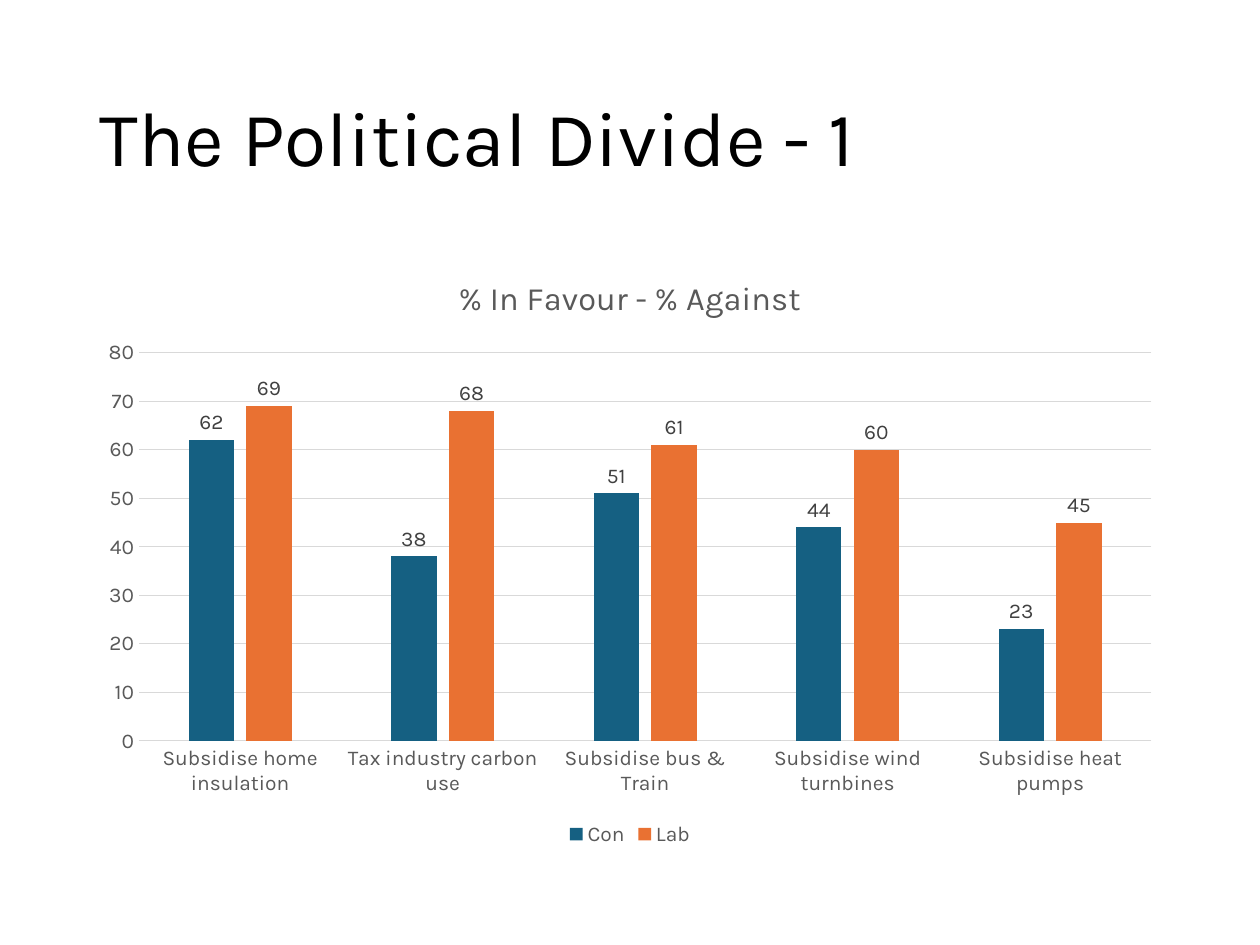
import pptx
import pptx.chart.data
import pptx.dml.color
import pptx.enum.chart
import pptx.enum.text
import pptx.util

Inches = pptx.util.Inches
Pt = pptx.util.Pt
RGBColor = pptx.dml.color.RGBColor

BLACK = RGBColor(0x00, 0x00, 0x00)
DARK_GREY = RGBColor(0x40, 0x40, 0x40)
GREY = RGBColor(0x59, 0x59, 0x59)
LIGHT_GREY = RGBColor(0xD9, 0xD9, 0xD9)
BLUE = RGBColor(0x15, 0x60, 0x82)
ORANGE = RGBColor(0xE9, 0x71, 0x32)


def format_font(font, size=12, color=GREY):
    font.name = "Karla"
    font.size = Pt(size)
    font.bold = False
    font.color.rgb = color


def write_text(text_frame, text, line_spacing=None, **font_format):
    text_frame.text = text
    paragraph = text_frame.paragraphs[0]
    paragraph.alignment = pptx.enum.text.PP_ALIGN.LEFT
    paragraph.line_spacing = line_spacing
    format_font(paragraph.runs[0].font, **font_format)


presentation = pptx.Presentation()
presentation.slide_width = Inches(10)
presentation.slide_height = Inches(7.5)
slide = presentation.slides.add_slide(presentation.slide_layouts[5])

title = slide.shapes.title
title.left, title.top = Inches(0.69), Inches(0.4)
title.width, title.height = Inches(8.62), Inches(1.45)
title.text_frame.vertical_anchor = pptx.enum.text.MSO_ANCHOR.MIDDLE
write_text(title.text_frame, "The Political Divide - 1", line_spacing=0.9, size=44, color=BLACK)

chart_data = pptx.chart.data.CategoryChartData()
chart_data.categories = [
    "Subsidise home insulation",
    "Tax industry carbon use",
    "Subsidise bus & Train",
    "Subsidise wind turnbines",
    "Subsidise heat pumps",
]
chart_data.add_series("Con", [62, 38, 51, 44, 23])
chart_data.add_series("Lab", [69, 68, 61, 60, 45])
chart = slide.shapes.add_chart(
    pptx.enum.chart.XL_CHART_TYPE.COLUMN_CLUSTERED,
    Inches(0.69), Inches(2), Inches(8.62), Inches(4.76), chart_data,
).chart
format_font(chart.font, size=10, color=BLACK)

chart.has_title = True
write_text(chart.chart_title.text_frame, "% In Favour - % Against", size=18.6)
chart.chart_title.include_in_layout = False

chart.has_legend = True
chart.legend.position = pptx.enum.chart.XL_LEGEND_POSITION.BOTTOM
chart.legend.include_in_layout = False
format_font(chart.legend.font)

for axis in (chart.category_axis, chart.value_axis):
    axis.major_tick_mark = pptx.enum.chart.XL_TICK_MARK.NONE
    axis.minor_tick_mark = pptx.enum.chart.XL_TICK_MARK.NONE
    format_font(axis.tick_labels.font)

chart.value_axis.minimum_scale = 0
chart.value_axis.maximum_scale = 80
chart.value_axis.major_unit = 10
chart.value_axis.has_major_gridlines = True
chart.value_axis.format.line.fill.background()
for line in (chart.category_axis.format.line, chart.value_axis.major_gridlines.format.line):
    line.color.rgb = LIGHT_GREY
    line.width = Pt(0.75)

plot = chart.plots[0]
plot.gap_width = 219
plot.overlap = -27
plot.vary_by_categories = False
for series, color in zip(plot.series, (BLUE, ORANGE)):
    series.format.fill.solid()
    series.format.fill.fore_color.rgb = color
    series.invert_if_negative = False
    labels = series.data_labels
    labels.show_value = True
    labels.position = pptx.enum.chart.XL_LABEL_POSITION.OUTSIDE_END
    format_font(labels.font, color=DARK_GREY)

presentation.save("out.pptx")
